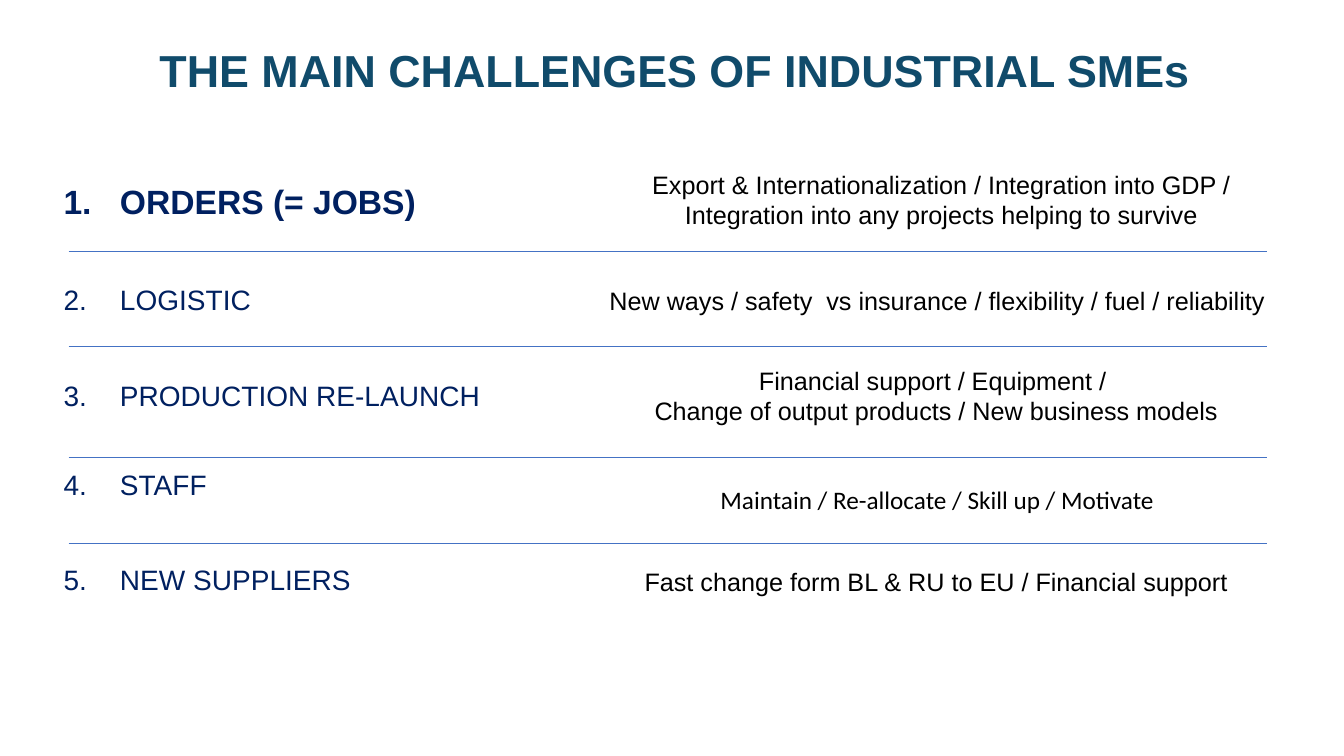
from lxml import etree
from pptx import Presentation
from pptx.dml.color import RGBColor as RGB
from pptx.enum.shapes import MSO_CONNECTOR as Conn
from pptx.enum.text import MSO_ANCHOR as Anchor, MSO_AUTO_SIZE as Auto, PP_ALIGN as Align
from pptx.oxml.ns import qn
from pptx.util import Inches, Pt

COLORS = {"title": "104B6B", "list": "002060", "note": "000000", "rule": "4472C4"}

# Topic, size, space before in points
TOPICS = [
    ("ORDERS (= JOBS)", 24, 10),
    ("LOGISTIC", 20, 46.4),
    ("PRODUCTION RE-LAUNCH", 20, 46.4),
    ("STAFF", 20, 42.4),
    ("NEW SUPPLIERS", 20, 46.4),
]
# Left, top, height, font, text
NOTES = [
    (5.98, 1.63, 0.7, "Arial", "Export & Internationalization / Integration into GDP / "
     "Integration into any projects helping to survive"),
    (5.94, 2.68, 0.6, "Arial",
     "New ways / safety  vs insurance / flexibility / fuel / reliability"),
    (5.93, 3.57, 0.7, "Arial", "Financial support / Equipment / \n"
     "Change of output products / New business models"),
    (5.94, 4.67, 0.57, "Calibri", "Maintain / Re-allocate / Skill up / Motivate"),
    (5.93, 5.48, 0.57, "Arial", "Fast change form BL & RU to EU / Financial support"),
]
RULES = [2.49, 3.44, 4.54, 5.39]


def place(shape, left, top, width, height):
    shape.left, shape.top = Inches(left), Inches(top)
    shape.width, shape.height = Inches(width), Inches(height)


def style(para, size, color, font="Arial", bold=False):
    for run in para.runs:
        run.font.name, run.font.size, run.font.bold = font, Pt(size), bold
        run.font.color.rgb = RGB.from_string(COLORS[color])


def add_title(slide, text):
    title = slide.shapes.title
    place(title, 0, 0, 13.39, 1.45)
    frame = title.text_frame
    frame.text = text
    frame.auto_size, frame.vertical_anchor = Auto.NONE, Anchor.MIDDLE
    para = frame.paragraphs[0]
    para.alignment, para.line_spacing = Align.CENTER, 0.9
    style(para, 32, "title", bold=True)


def number(para):
    props = para._p.get_or_add_pPr()
    props.set("marL", str(Inches(0.56)))
    props.set("indent", str(-Inches(0.56)))
    etree.SubElement(props, qn("a:buFont"), typeface="+mj-lt")
    etree.SubElement(props, qn("a:buAutoNum"), type="arabicPeriod")


def add_list(slide):
    body = slide.placeholders[1]
    place(body, 0.53, 1.79, 11.69, 4.61)
    frame = body.text_frame
    frame.text = "\n".join(topic for topic, _, _ in TOPICS)
    frame.auto_size, frame.vertical_anchor = Auto.NONE, Anchor.TOP
    for para, (_, size, gap) in zip(frame.paragraphs, TOPICS):
        para.line_spacing, para.space_before = 0.9, Pt(gap)
        number(para)
        style(para, size, "list", bold=size == 24)


def add_note(slide, left, top, height, font, text):
    box = slide.shapes.add_textbox(Inches(left), Inches(top), Inches(6.71), Inches(height))
    frame = box.text_frame
    frame.word_wrap, frame.vertical_anchor = True, Anchor.MIDDLE
    frame.text = text
    for para in frame.paragraphs:
        para.alignment = Align.CENTER
        style(para, 18, "note", font)


def add_rule(slide, top):
    rule = slide.shapes.add_connector(
        Conn.STRAIGHT, Inches(0.68), Inches(top), Inches(12.57), Inches(top))
    rule.line.color.rgb = RGB.from_string(COLORS["rule"])
    rule.line.width = Pt(0.5)
    etree.SubElement(rule._element.spPr, qn("a:effectLst"))


def main():
    deck = Presentation()
    deck.slide_width, deck.slide_height = Inches(13.33), Inches(7.5)
    slide = deck.slides.add_slide(deck.slide_layouts[1])

    # Title and numbered topics
    add_title(slide, "THE MAIN CHALLENGES OF INDUSTRIAL SMEs")
    add_list(slide)

    # Notes beside the topics, rules between the rows
    for note in NOTES:
        add_note(slide, *note)
    for top in RULES:
        add_rule(slide, top)

    deck.save("out.pptx")


if __name__ == "__main__":
    main()
